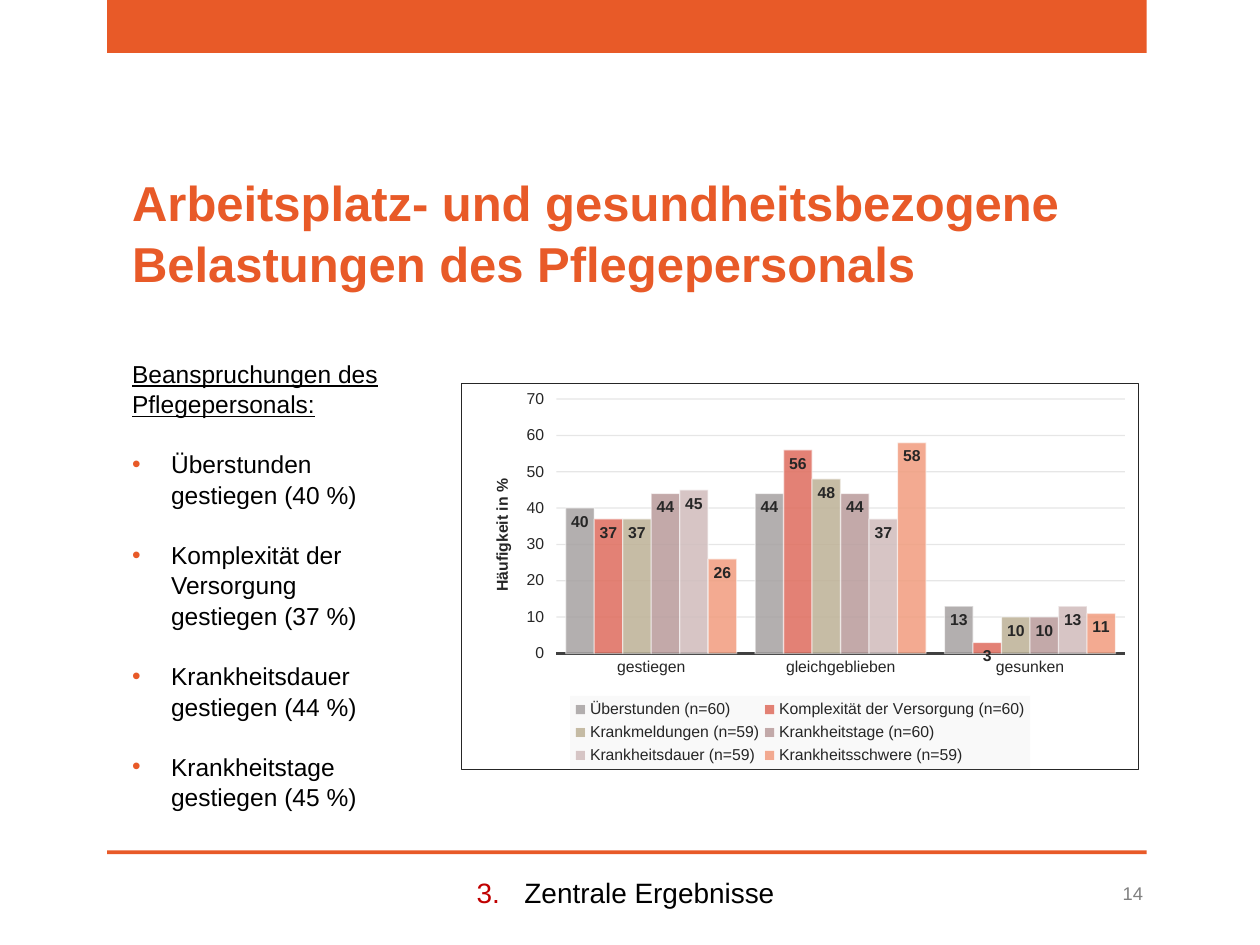
from dataclasses import dataclass

from lxml import etree
from pptx import Presentation
from pptx import util as u
from pptx.chart.data import CategoryChartData
from pptx.dml.color import RGBColor
from pptx.enum import chart as ch, shapes, text
from pptx.oxml import parse_xml
from pptx.oxml.ns import nsdecls, qn


@dataclass(frozen=True)
class Theme:
    font: str = "Arial"
    accent: str = "E85A28"
    number: str = "C00000"
    ink: str = "000000"
    muted: str = "808080"
    chart_ink: str = "262626"
    axis: str = "404040"
    grid: str = "0D0D0D"
    white: str = "FFFFFF"
    legend: str = "F2F2F2"
    title: float = 28
    footer: float = 16
    body: float = 14
    page: float = 10.5
    chart: float = 9


T = Theme()
SERIES = [
    ("Überstunden (n=60)", (40, 44, 13), "A6A1A1"),
    ("Komplexität der Versorgung (n=60)", (37, 56, 3), "DF6C5D"),
    ("Krankmeldungen (n=59)", (37, 48, 10), "BDB196"),
    ("Krankheitstage (n=60)", (44, 44, 10), "B99B9B"),
    ("Krankheitsdauer (n=59)", (45, 37, 13), "D0BCBC"),
    ("Krankheitsschwere (n=59)", (26, 58, 11), "F19C7E"),
]
BURDENS = [
    "Überstunden gestiegen (40 %)",
    "Komplexität der Versorgung gestiegen (37 %)",
    "Krankheitsdauer gestiegen (44 %)",
    "Krankheitstage gestiegen (45 %)",
]


def inches(box):
    return [u.Inches(v) for v in box]


def style_font(font, size, color, bold=False, underline=False):
    font.name, font.size = T.font, u.Pt(size)
    font.bold, font.underline = bold, underline
    font.color.rgb = RGBColor.from_string(color)


def paint(fill, color, alpha=100):
    fill.solid()
    fill.fore_color.rgb = RGBColor.from_string(color)
    if alpha < 100:
        clr = next(fill._xPr.iter(qn("a:srgbClr")))
        etree.SubElement(clr, qn("a:alpha")).set("val", str(alpha * 1000))


def add_frame(s, box, anchor=text.MSO_ANCHOR.TOP):
    tf = s.shapes.add_textbox(*inches(box)).text_frame
    tf.word_wrap = True
    tf.vertical_anchor = anchor
    return tf


def add_text(tf, content, size, color=T.ink, align=text.PP_ALIGN.LEFT, bold=False,
             underline=False, spacing=1.0, before=0, marker=None, marker_color=None, indent=0):
    p = tf.paragraphs[0]
    if p.runs:
        p = tf.add_paragraph()
    p.alignment, p.line_spacing, p.space_before = align, spacing, u.Pt(before)
    r = p.add_run()
    r.text = content
    style_font(r.font, size, color, bold, underline)
    if marker is not None:
        pPr = p._p.get_or_add_pPr()
        pPr.set("marL", str(u.Inches(indent)))
        pPr.set("indent", str(-u.Inches(indent)))
        clr = etree.SubElement(pPr, qn("a:buClr"))
        etree.SubElement(clr, qn("a:srgbClr")).set("val", marker_color)
        etree.SubElement(pPr, qn("a:buFont")).set("typeface", T.font)
        if isinstance(marker, int):
            num = etree.SubElement(pPr, qn("a:buAutoNum"))
            num.set("type", "arabicPeriod")
            num.set("startAt", str(marker))
        else:
            etree.SubElement(pPr, qn("a:buChar")).set("char", marker)


def add_bar(s, box):
    sp = s.shapes.add_shape(shapes.MSO_SHAPE.RECTANGLE, *inches(box))
    sp.shadow.inherit = False
    paint(sp.fill, T.accent)
    sp.line.fill.background()


def add_title(s, box):
    add_text(add_frame(s, box), "Arbeitsplatz- und gesundheitsbezogene Belastungen des Pflegepersonals",
             T.title, T.accent, bold=True, spacing=1.03)


def add_burdens(s, box):
    tf = add_frame(s, box)
    add_text(tf, "Beanspruchungen des Pflegepersonals:", T.body, underline=True, spacing=1.04)
    for burden in BURDENS:
        add_text(tf, burden, T.body, spacing=1.04, before=16.8,
                 marker="•", marker_color=T.accent, indent=0.31)


def add_footer(s, box, page_box):
    add_text(add_frame(s, box), "Zentrale Ergebnisse", T.footer, align=text.PP_ALIGN.CENTER,
             marker=3, marker_color=T.number, indent=0.38)
    add_text(add_frame(s, page_box, text.MSO_ANCHOR.MIDDLE), "14", T.page, T.muted,
             align=text.PP_ALIGN.RIGHT)


def set_layout(parent, index, **place):
    for old in parent.findall(qn("c:layout")):
        parent.remove(old)
    layout = etree.Element(qn("c:layout"))
    manual = etree.SubElement(layout, qn("c:manualLayout"))
    if "w" in place and index == 0:
        etree.SubElement(manual, qn("c:layoutTarget")).set("val", "inner")
    for axis in "xy":
        etree.SubElement(manual, qn(f"c:{axis}Mode")).set("val", "edge")
    for key, value in place.items():
        etree.SubElement(manual, qn(f"c:{key}")).set("val", str(value))
    parent.insert(index, layout)


def box_properties(fill, alpha=100, line=None):
    border = (f'<a:ln w="{u.Pt(0.75)}"><a:solidFill><a:srgbClr val="{line}"/></a:solidFill></a:ln>'
              if line else "<a:ln><a:noFill/></a:ln>")
    return parse_xml(f'<c:spPr {nsdecls("c", "a")}><a:solidFill><a:srgbClr val="{fill}">'
                     f'<a:alpha val="{alpha * 1000}"/></a:srgbClr></a:solidFill>{border}</c:spPr>')


def style_series(series, color):
    paint(series.format.fill, color, 85)
    series.format.line.width = u.Pt(0.75)
    paint(series.format.line.fill, T.white, 50)
    labels = series.data_labels
    labels.show_value = True
    labels.number_format, labels.number_format_is_linked = "0", False
    labels.position = ch.XL_LABEL_POSITION.INSIDE_END
    style_font(labels.font, T.chart, T.chart_ink, bold=True)


def style_axes(chart):
    cat, val = chart.category_axis, chart.value_axis
    for axis in (cat, val):
        style_font(axis.tick_labels.font, T.chart, T.chart_ink)
    cat.major_tick_mark = ch.XL_TICK_MARK.NONE
    cat.format.line.width = u.Pt(1.5)
    paint(cat.format.line.fill, T.axis)
    val.minimum_scale, val.maximum_scale, val.major_unit = 0, 70, 10
    val.tick_labels.number_format, val.tick_labels.number_format_is_linked = "0", False
    val.format.line.fill.background()
    grid = val.major_gridlines.format.line
    grid.width = u.Pt(0.75)
    paint(grid.fill, T.grid, 10)
    r = val.axis_title.text_frame.paragraphs[0].add_run()
    r.text = "Häufigkeit in %"
    style_font(r.font, T.chart, T.chart_ink, bold=True)
    set_layout(val.axis_title._element, 1, x=0.04, y=0.24)


def add_frequency_chart(s, box):
    data = CategoryChartData(number_format="0")
    data.categories = ["gestiegen", "gleichgeblieben", "gesunken"]
    for name, values, _ in SERIES:
        data.add_series(name, values)
    chart = s.shapes.add_chart(ch.XL_CHART_TYPE.COLUMN_CLUSTERED, *inches(box), data).chart
    chart.has_title = False
    style_font(chart.font, 10, T.ink)
    chart._chartSpace.find(qn("c:chart")).addnext(box_properties(T.white, line=T.chart_ink))
    plot = chart.plots[0]
    plot.gap_width, plot.overlap, plot.vary_by_categories = 65, 0, False
    for series, (_, _, color) in zip(plot.series, SERIES):
        style_series(series, color)
    style_axes(chart)
    set_layout(chart._chartSpace.chart.plotArea, 0, x=0.14, y=0.04, w=0.84, h=0.66)
    chart.has_legend = True
    legend = chart.legend
    legend.position = ch.XL_LEGEND_POSITION.BOTTOM
    legend.include_in_layout = False
    style_font(legend.font, T.chart, T.chart_ink)
    legend._element.find(qn("c:txPr")).addprevious(box_properties(T.legend, 39))
    set_layout(legend._element, 1, x=0.16, y=0.81, w=0.68, h=0.19)


def main():
    prs = Presentation()
    prs.slide_width, prs.slide_height = u.Inches(10), u.Inches(7.5)
    s = prs.slides.add_slide(prs.slide_layouts[6])
    add_bar(s, (0.85, 0, 8.25, 0.42))
    add_bar(s, (0.85, 6.75, 8.25, 0.03))
    add_frequency_chart(s, (3.66, 3.04, 5.38, 3.07))
    add_title(s, (0.95, 1.31, 8.21, 1.04))
    add_burdens(s, (0.95, 2.79, 2.23, 3.64))
    add_footer(s, (0.83, 6.9, 8.27, 0.37), (8.34, 6.89, 0.83, 0.4))
    prs.save("out.pptx")


if __name__ == "__main__":
    main()
